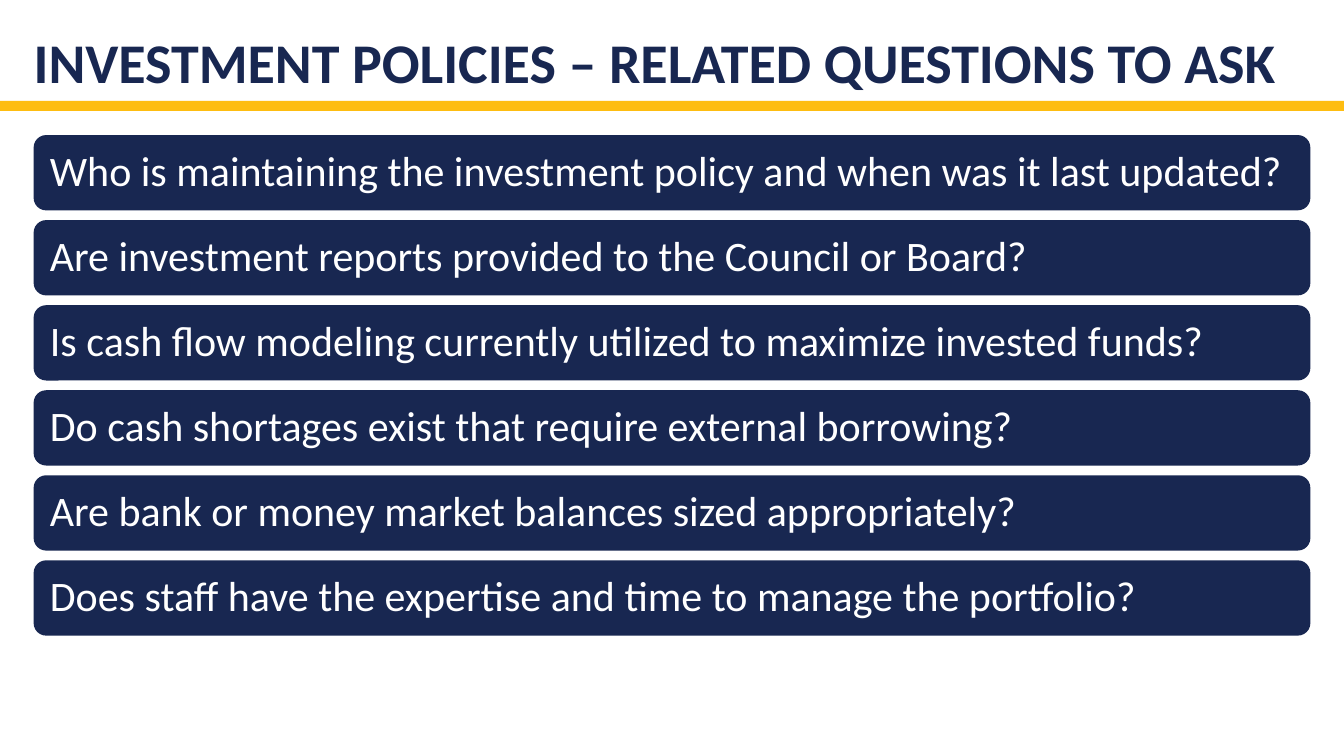
"""Build a slide listing questions to ask about investment policies."""
from pptx import Presentation
from pptx.dml.color import RGBColor
from pptx.enum.shapes import MSO_SHAPE as Shape
from pptx.enum.text import MSO_ANCHOR as Anchor, PP_ALIGN as Align
from pptx.util import Pt

TITLE = "INVESTMENT POLICIES – RELATED QUESTIONS TO ASK"
QUESTIONS = [
    "Who is maintaining the investment policy and when was it last updated?",
    "Are investment reports provided to the Council or Board?",
    "Is cash flow modeling currently utilized to maximize invested funds?",
    "Do cash shortages exist that require external borrowing?",
    "Are bank or money market balances sized appropriately?",
    "Does staff have the expertise and time to manage the portfolio?",
]
COLORS = {"navy": "182751", "gold": "FEBD11", "white": "FFFFFF"}
FONT = "Calibri"
SLIDE_WIDTH, SLIDE_HEIGHT = 960, 540
MARGIN = 24
CONTENT_WIDTH = SLIDE_WIDTH - 2 * MARGIN
RULE_TOP, RULE_HEIGHT = 72, 7.2
FIRST_TOP, CARD_HEIGHT, CARD_PITCH = 96.5, 53.8, 60.75


def write_text(shape, text, *, size, color, anchor, inset_x, inset_y, bold=False):
    frame = shape.text_frame
    frame.word_wrap = True
    frame.vertical_anchor = anchor
    frame.margin_left = frame.margin_right = Pt(inset_x)
    frame.margin_top = frame.margin_bottom = Pt(inset_y)
    paragraph = frame.paragraphs[0]
    paragraph.alignment = Align.LEFT
    paragraph.line_spacing = 0.9
    run = paragraph.add_run()
    run.text = text
    run.font.name = FONT
    run.font.size = Pt(size)
    run.font.bold = bold
    run.font.color.rgb = RGBColor.from_string(COLORS[color])


def add_block(slide, kind, left, top, width, height, color):
    shape = slide.shapes.add_shape(kind, Pt(left), Pt(top), Pt(width), Pt(height))
    shape.shadow.inherit = False
    shape.fill.solid()
    shape.fill.fore_color.rgb = RGBColor.from_string(COLORS[color])
    shape.line.fill.background()
    return shape


def main():
    presentation = Presentation()
    presentation.slide_width = Pt(SLIDE_WIDTH)
    presentation.slide_height = Pt(SLIDE_HEIGHT)
    slide = presentation.slides.add_slide(presentation.slide_layouts[5])

    title = slide.shapes.title
    title.left, title.top = Pt(MARGIN), Pt(0)
    title.width, title.height = Pt(CONTENT_WIDTH), Pt(RULE_TOP)
    write_text(title, TITLE, size=40, color="navy", anchor=Anchor.BOTTOM,
               inset_x=0, inset_y=3.6, bold=True)

    add_block(slide, Shape.RECTANGLE, 0, RULE_TOP, SLIDE_WIDTH, RULE_HEIGHT, "gold")
    for index, question in enumerate(QUESTIONS):
        card = add_block(slide, Shape.ROUNDED_RECTANGLE, MARGIN,
                         FIRST_TOP + index * CARD_PITCH, CONTENT_WIDTH, CARD_HEIGHT, "navy")
        write_text(card, question, size=30, color="white", anchor=Anchor.MIDDLE,
                   inset_x=9, inset_y=6)

    presentation.save("out.pptx")


if __name__ == "__main__":
    main()
